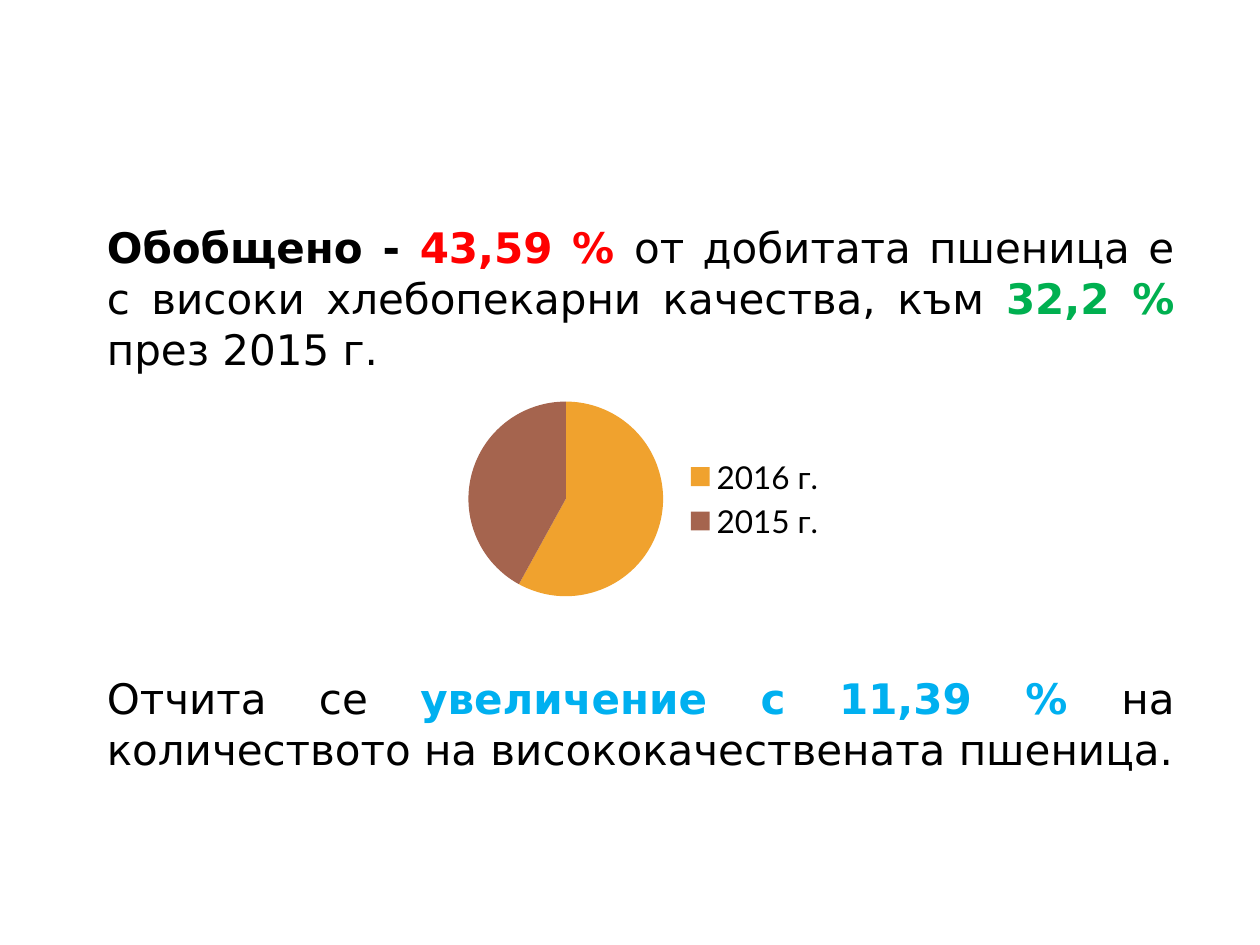
import dataclasses

import pptx
import pptx.chart.data
import pptx.dml.color
import pptx.enum.chart
import pptx.enum.text
import pptx.util
from pptx.util import Inches


@dataclasses.dataclass(frozen=True)
class Theme:
    """Colours, fonts and type sizes of the slide."""
    text: str = "000000"
    current: str = "FF0000"
    previous: str = "00B050"
    growth: str = "00B0F0"
    slices: tuple = ("F0A22E", "A5644E")
    body_font: str = "DejaVu Sans"
    chart_font: str = "Lato"
    body_size: float = 24
    body_leading: float = 28.9
    legend_size: float = 18


THEME = Theme()


def rgb(value):
    """Return a colour object for a hex string."""
    return pptx.dml.color.RGBColor.from_string(value)


def add_statement(slide, box, parts):
    """Place a justified paragraph; parts with a colour are bold."""
    tf = slide.shapes.add_textbox(*box).text_frame
    tf.word_wrap = True
    p = tf.paragraphs[0]
    p.alignment = pptx.enum.text.PP_ALIGN.JUSTIFY
    p.line_spacing = pptx.util.Pt(THEME.body_leading)
    for text, colour in parts:
        r = p.add_run()
        r.text = text
        r.font.name = THEME.body_font
        r.font.size = pptx.util.Pt(THEME.body_size)
        r.font.bold = colour is not None
        r.font.color.rgb = rgb(colour or THEME.text)


def add_share_pie(slide, box):
    """Place the pie that compares the two harvest years."""
    data = pptx.chart.data.CategoryChartData()
    data.categories = ["2016 г.", "2015 г."]
    data.add_series("Series 1", (58, 42))
    chart = slide.shapes.add_chart(
        pptx.enum.chart.XL_CHART_TYPE.PIE, *box, data).chart
    chart.has_title = False
    chart.font.name = THEME.chart_font
    chart.font.size = pptx.util.Pt(THEME.legend_size)
    chart.font.color.rgb = rgb(THEME.text)
    chart.has_legend = True
    chart.legend.position = pptx.enum.chart.XL_LEGEND_POSITION.RIGHT
    chart.legend.include_in_layout = False
    plot = chart.plots[0]
    plot.vary_by_categories = True
    for i, colour in enumerate(THEME.slices):
        fill = plot.series[0].points[i].format.fill
        fill.solid()
        fill.fore_color.rgb = rgb(colour)


def main():
    """Build the wheat quality slide and save it."""
    prs = pptx.Presentation()
    prs.slide_width, prs.slide_height = Inches(10), Inches(7.5)
    slide = prs.slides.add_slide(prs.slide_layouts[6])
    left, width = Inches(0.75), Inches(8.67)
    add_statement(slide, (left, Inches(1.71), width, Inches(1.3)), [
        ("Обобщено - ", THEME.text),
        ("43,59 % ", THEME.current),
        ("от добитата пшеница е с високи хлебопекарни качества, към ", None),
        ("32,2 %", THEME.previous),
        (" през 2015 г.", None),
    ])
    add_share_pie(slide, (Inches(3.58), Inches(2.75), Inches(3.08), Inches(2.42)))
    add_statement(slide, (left, Inches(5.29), width, Inches(0.9)), [
        ("Отчита се ", None),
        ("увеличение с 11,39 % ", THEME.growth),
        ("на количеството на висококачествената пшеница.", None),
    ])
    prs.save("out.pptx")


if __name__ == "__main__":
    main()
